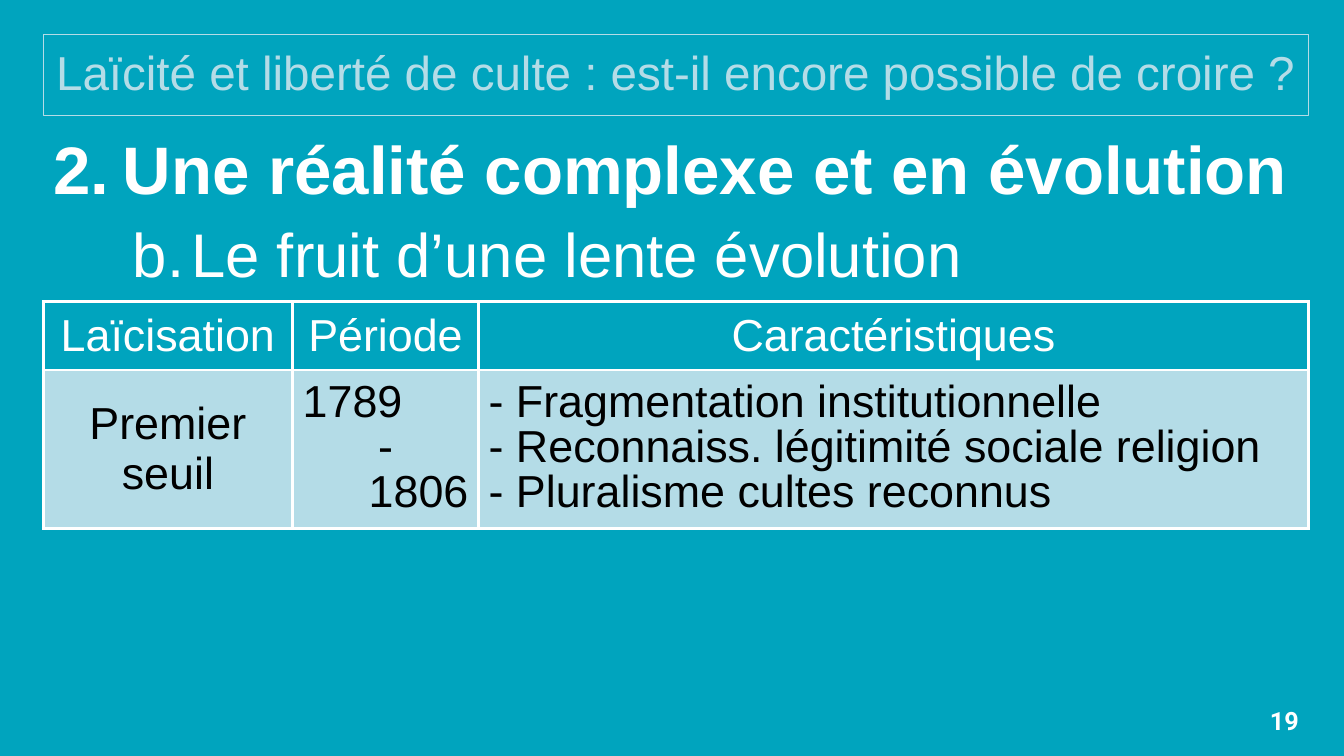
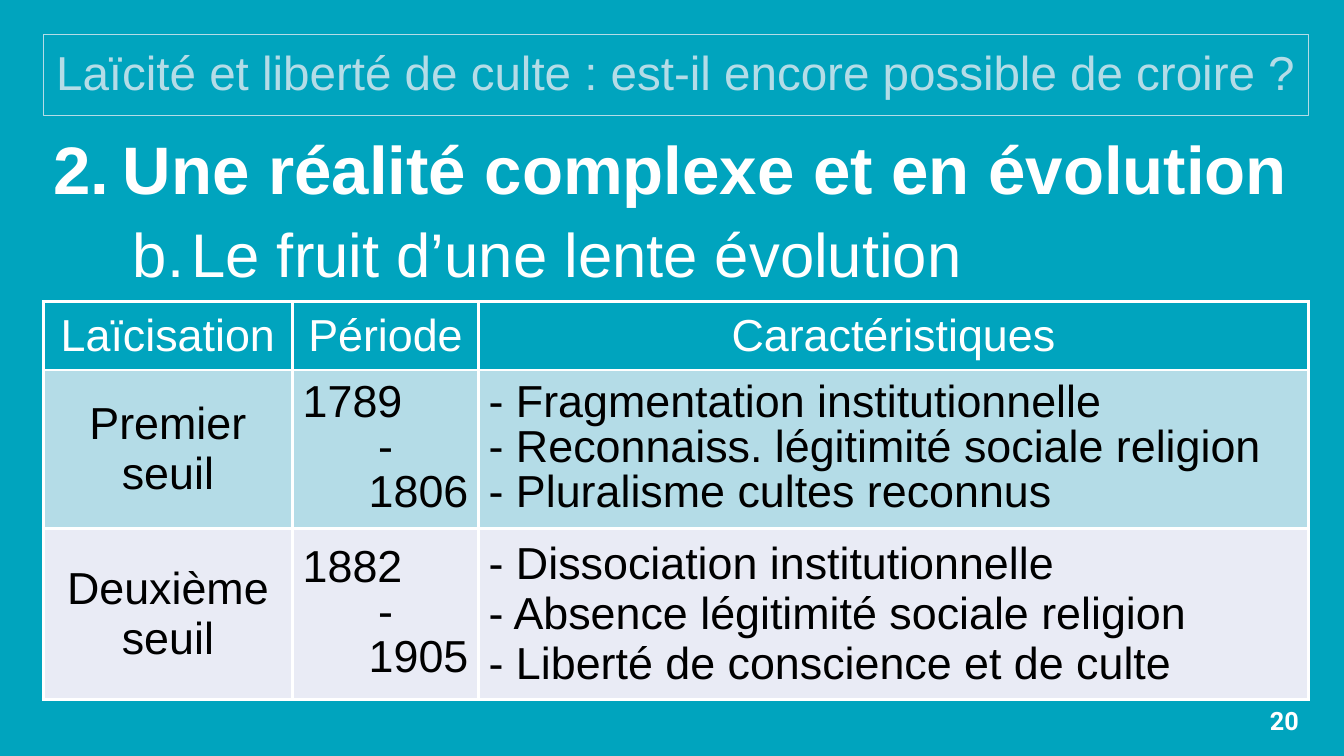
from dataclasses import dataclass

from lxml.etree import SubElement
from pptx import Presentation
from pptx.dml.color import RGBColor
from pptx.enum.shapes import MSO_SHAPE as Preset
from pptx.enum.text import MSO_ANCHOR as Anchor, PP_ALIGN as Align
from pptx.oxml.ns import qn
from pptx.util import Inches, Pt

WIDTH, HEIGHT = 13.33, 7.5
LEFT, CONTENT_WIDTH = 0.43, 12.55
TEAL, PALE_BLUE, LAVENDER = "00A4BE", "B4DCE7", "E9EBF5"
WHITE, BLACK = "FFFFFF", "000000"
TEXT_FONT, NUMBER_FONT = "Arial", "Roboto"
COLUMN_SHARES = (0.197, 0.147, 0.656)
HEADER_HEIGHT, ROW_HEIGHT = 0.68, 1.57
TIGHT = 0.9

TITLE = "Laïcité et liberté de culte : est-il encore possible de croire ?"
HEADING = "Une réalité complexe et en évolution"
SUBHEADING = "Le fruit d’une lente évolution"
HEADERS = ("Laïcisation", "Période", "Caractéristiques")


@dataclass
class Box:
    left: float
    top: float
    width: float
    height: float

    def lengths(self):
        return [Inches(n) for n in (self.left, self.top, self.width, self.height)]


@dataclass
class Threshold:
    name: str
    years: tuple
    traits: tuple
    fill: str
    trait_spacing: float


TITLE_BOX = Box(LEFT, 0.34, CONTENT_WIDTH, 0.81)
OUTLINE_BOX = Box(LEFT, 1.3, CONTENT_WIDTH, 5.65)
NUMBER_BOX = Box(LEFT + CONTENT_WIDTH - 3, 6.95, 3, 0.4)
TABLE_TOP = 2.99

THRESHOLDS = (
    Threshold(
        "Premier seuil",
        ("1789", "-", "1806"),
        (
            "- Fragmentation institutionnelle",
            "- Reconnaiss. légitimité sociale religion",
            "- Pluralisme cultes reconnus",
        ),
        PALE_BLUE,
        TIGHT,
    ),
    Threshold(
        "Deuxième seuil",
        ("1882", "-", "1905"),
        (
            "- Dissociation institutionnelle",
            "- Absence légitimité sociale religion",
            "- Liberté de conscience et de culte",
        ),
        LAVENDER,
        1.0,
    ),
)


def color(code):
    return RGBColor.from_string(code)


def paint(item, code):
    item.fill.solid()
    item.fill.fore_color.rgb = color(code)


def style(para, size, code, bold=False, font=TEXT_FONT, align=Align.LEFT, spacing=1.0):
    para.alignment = align
    para.line_spacing = spacing
    for span in para.runs:
        span.font.size = Pt(size)
        span.font.name = font
        span.font.bold = bold
        span.font.color.rgb = color(code)


def number(para, scheme, indent, hanging, before, after):
    para.space_before = Pt(before)
    para.space_after = Pt(after)
    props = para._p.get_or_add_pPr()
    props.set("marL", str(Inches(indent)))
    props.set("indent", str(-Inches(hanging)))
    SubElement(props, qn("a:buFont"), typeface="+mj-lt")
    SubElement(props, qn("a:buAutoNum"), type=scheme, startAt="2")


def add_text(page, box, text):
    frame = page.shapes.add_textbox(*box.lengths()).text_frame
    frame.word_wrap = True
    frame.text = text
    return frame


def add_title(page, box):
    banner = page.shapes.add_shape(Preset.RECTANGLE, *box.lengths())
    banner.shadow.inherit = False
    banner.fill.background()
    banner.line.color.rgb = color(PALE_BLUE)
    banner.line.width = Pt(0.75)
    frame = banner.text_frame
    frame.word_wrap = True
    frame.vertical_anchor = Anchor.MIDDLE
    frame.text = TITLE
    style(frame.paragraphs[0], 34, PALE_BLUE, align=Align.CENTER, spacing=TIGHT)


def add_outline(page, box):
    heading, subheading = add_text(page, box, f"{HEADING}\n{SUBHEADING}").paragraphs
    style(heading, 48, WHITE, bold=True, spacing=TIGHT)
    number(heading, "arabicPeriod", 0.69, 0.69, 10, 6)
    subheading.level = 1
    style(subheading, 44, WHITE, spacing=TIGHT)
    number(subheading, "alphaLcPeriod", 1.37, 0.58, 5, 18)


def add_page_number(page, box, value):
    frame = add_text(page, box, str(value))
    frame.vertical_anchor = Anchor.MIDDLE
    style(frame.paragraphs[0], 18, WHITE, bold=True, font=NUMBER_FONT, align=Align.RIGHT)


def add_borders(cell):
    props = cell._tc.get_or_add_tcPr()
    for side in ("lnL", "lnR", "lnT", "lnB"):
        line = SubElement(props, qn(f"a:{side}"), w=str(Pt(2.25)))
        fill = SubElement(line, qn("a:solidFill"))
        SubElement(fill, qn("a:srgbClr"), val=WHITE)


def fill_cell(cell, lines, fill, code, aligns, spacing=1.0):
    add_borders(cell)
    paint(cell, fill)
    cell.vertical_anchor = Anchor.MIDDLE
    cell.text = "\n".join(lines)
    for para, align in zip(cell.text_frame.paragraphs, aligns):
        style(para, 32, code, align=align, spacing=spacing)


def add_thresholds(page, box, thresholds):
    shape = page.shapes.add_table(len(thresholds) + 1, len(HEADERS), *box.lengths())
    table = shape.table
    table.first_row = table.horz_banding = False
    for column, share in zip(table.columns, COLUMN_SHARES):
        column.width = Inches(box.width * share)
    for index, row in enumerate(table.rows):
        row.height = Inches(ROW_HEIGHT if index else HEADER_HEIGHT)
    for cell, header in zip(table.rows[0].cells, HEADERS):
        fill_cell(cell, [header], TEAL, WHITE, [Align.CENTER])
    diagonal = (Align.LEFT, Align.CENTER, Align.RIGHT)
    for index, item in enumerate(thresholds, 1):
        name, period, traits = table.rows[index].cells
        fill_cell(name, [item.name], item.fill, BLACK, [Align.CENTER])
        fill_cell(period, item.years, item.fill, BLACK, diagonal, TIGHT)
        fill_cell(traits, item.traits, item.fill, BLACK,
                  [Align.LEFT] * len(item.traits), item.trait_spacing)


def add_threshold_page(deck, value, thresholds):
    page = deck.slides.add_slide(deck.slide_layouts[6])
    add_title(page, TITLE_BOX)
    add_outline(page, OUTLINE_BOX)
    add_page_number(page, NUMBER_BOX, value)
    height = HEADER_HEIGHT + ROW_HEIGHT * len(thresholds)
    add_thresholds(page, Box(LEFT, TABLE_TOP, CONTENT_WIDTH, height), thresholds)


def main():
    deck = Presentation()
    deck.slide_width, deck.slide_height = Inches(WIDTH), Inches(HEIGHT)
    paint(deck.slide_master.background, TEAL)
    for count, value in enumerate((19, 20), 1):
        add_threshold_page(deck, value, THRESHOLDS[:count])
    deck.save("out.pptx")


if __name__ == "__main__":
    main()
